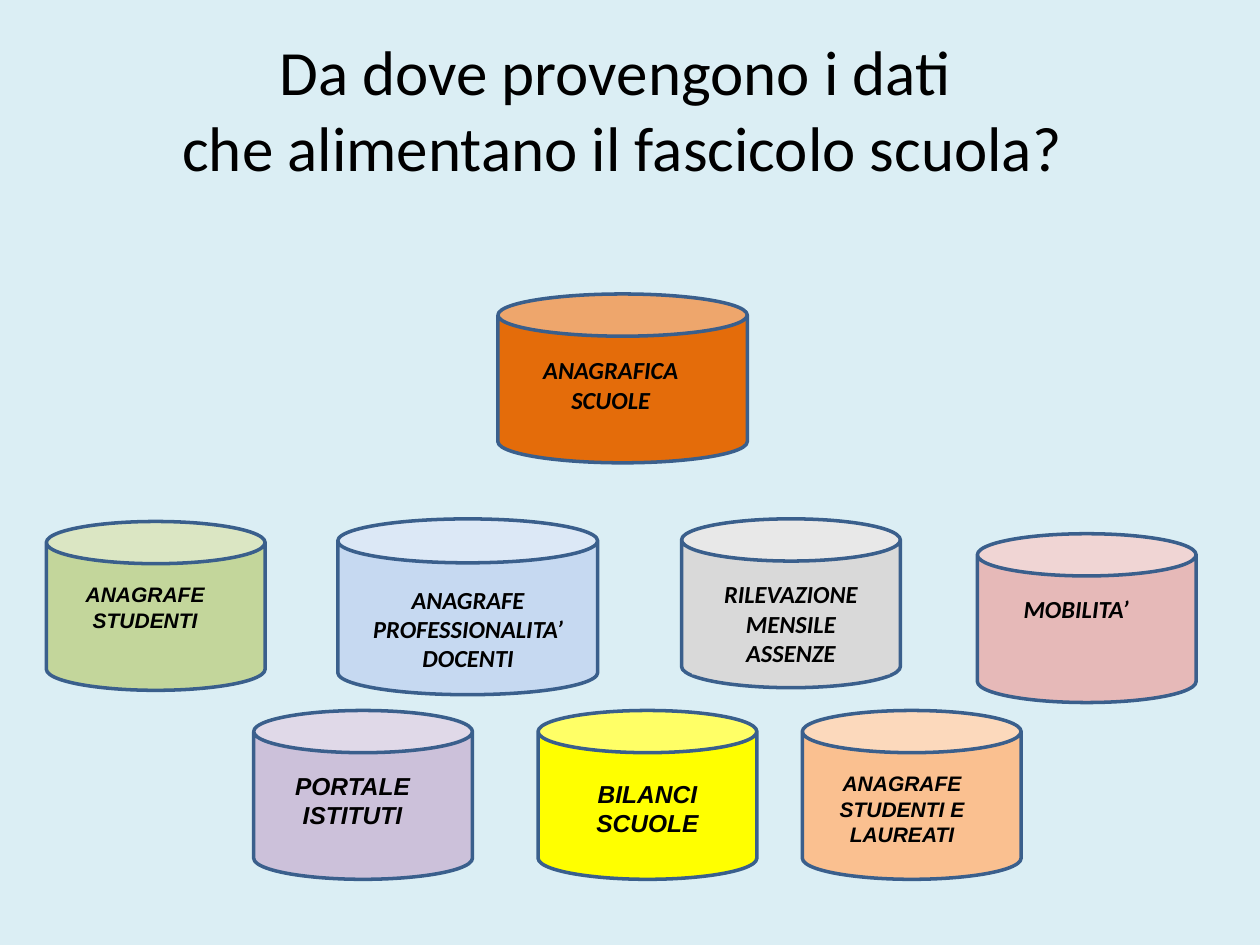
from pptx import Presentation
from pptx.dml.color import RGBColor
from pptx.enum.shapes import MSO_SHAPE
from pptx.enum.text import MSO_ANCHOR, MSO_AUTO_SIZE, PP_ALIGN
from pptx.util import Pt

CAN = MSO_SHAPE.CAN
TOP = MSO_ANCHOR.TOP
GROW = MSO_AUTO_SIZE.SHAPE_TO_FIT_TEXT
CENTER = PP_ALIGN.CENTER
TITLE_ONLY = 5


def color(value):
    return RGBColor.from_string(value)


def write(box, text, font="Calibri", size=14, bold=False, italic=False, ink="000000"):
    frame = box.text_frame
    frame.word_wrap = True
    frame.auto_size = GROW
    frame.vertical_anchor = TOP
    for index, line in enumerate(text.split("\n")):
        para = frame.add_paragraph() if index else frame.paragraphs[0]
        para.alignment = CENTER
        para.space_before = Pt(0)
        span = para.add_run()
        span.text = line
        span.font.name = font
        span.font.size = Pt(size)
        span.font.bold = bold
        span.font.italic = italic
        span.font.color.rgb = color(ink)


class Builder:
    background = "DBEEF4"
    outline = "3A5F8C"
    outline_width = 2

    def __init__(self, deck):
        self.page = deck.slides.add_slide(deck.slide_layouts[TITLE_ONLY])
        fill = self.page.background.fill
        fill.solid()
        fill.fore_color.rgb = color(self.background)

    def title(self, text, left, top, width, height):
        box = self.page.shapes.title
        box.left, box.top, box.width, box.height = map(Pt, (left, top, width, height))
        write(box, text, size=36)

    def database(self, text, fill, can, label, filled=False, font="Calibri", size=14):
        group = self.page.shapes.add_group_shape()
        drum = group.shapes.add_shape(CAN, *map(Pt, can))
        drum.shadow.inherit = False
        drum.fill.solid()
        drum.fill.fore_color.rgb = color(fill)
        drum.line.color.rgb = color(self.outline)
        drum.line.width = Pt(self.outline_width)
        box = group.shapes.add_textbox(*map(Pt, label))
        if filled:
            box.fill.solid()
            box.fill.fore_color.rgb = color(fill)
        write(box, text, font=font, size=size, bold=True, italic=True)


def main():
    deck = Presentation()
    deck.slide_width, deck.slide_height = Pt(720), Pt(540)
    builder = Builder(deck)
    builder.title("Da dove provengono i dati \nche alimentano il fascicolo scuola?", 0, 15, 711, 94.5)

    can_size = (125, 96.5)
    arial = {"font": "Arial"}
    small_arial = {"font": "Arial", "size": 12}
    filled = {"filled": True}
    bottom_row = 406
    databases = [
        ("ANAGRAFE STUDENTI", "C3D69B", (26.5, 298, *can_size), (37.5, 329, 91, 36), small_arial),
        ("ANAGRAFE PROFESSIONALITA’ DOCENTI", "C6D9F1", (193, 296.5, 148.5, 100.5),
         (204.5, 330.5, 126, 54), filled),
        ("ANAGRAFICA SCUOLE", "E46C0A", (284.5, 168, 142.5, 96.5), (297, 199.5, 104, 41), filled),
        ("RILEVAZIONE MENSILE ASSENZE", "D9D9D9", (389.5, 296.5, *can_size),
         (395.5, 327.5, 113, 58), filled),
        ("MOBILITA’", "E6B9B8", (558.5, 305, *can_size), (569.5, 336, 91, 24.5), filled),
        ("PORTALE ISTITUTI", "CCC1DA", (145, bottom_row, *can_size), (156, 437, 91, 41), arial),
        ("BILANCI\nSCUOLE", "FFFF00", (307.5, bottom_row, *can_size), (324.5, 441.5, 91, 41), arial),
        ("ANAGRAFE STUDENTI E LAUREATI", "FAC090", (458.5, bottom_row, *can_size),
         (470, 437, 91, 51), small_arial),
    ]
    for text, fill, can, label, style in databases:
        builder.database(text, fill, can, label, **style)
    deck.save("out.pptx")


if __name__ == "__main__":
    main()
